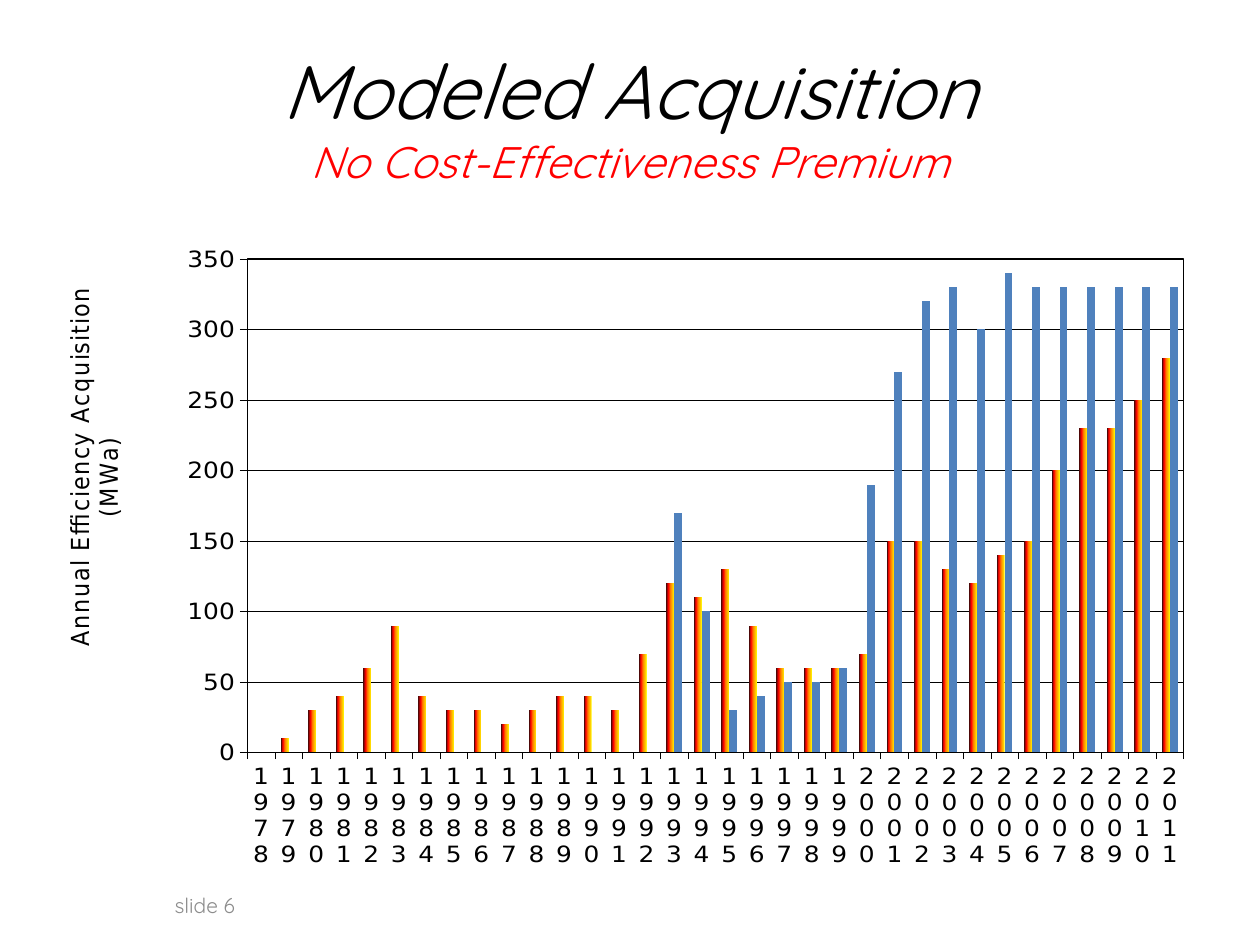
from lxml.etree import SubElement
from pptx import Presentation
from pptx.chart.data import CategoryChartData
from pptx.dml.color import RGBColor
from pptx.enum.chart import XL_CHART_TYPE as ChartType, XL_TICK_MARK as Tick
from pptx.enum.text import MSO_ANCHOR as Anchor, PP_ALIGN as Align
from pptx.oxml import parse_xml
from pptx.oxml.ns import nsdecls, qn
from pptx.util import Inches, Pt

WIDTH, HEIGHT = 10, 7.5
COLORS = {"ink": "000000", "accent": "FF0000", "muted": "8C8C8C", "modeled": "4F81BD"}
FLAME = {0: "FFF200", 45: "FF7A00", 70: "FF0300", 100: "4D0808"}
TEXT_FONT, CHART_FONT = "Quicksand", "DejaVu Sans"
CHART_SIZE = 14.2
FIRST_YEAR = 1978
ACTUAL = [0, 10, 30, 40, 60, 90, 40, 30, 30, 20, 30, 40, 40, 30, 70, 120, 110,
          130, 90, 60, 60, 60, 70, 150, 150, 130, 120, 140, 150, 200, 230, 230, 250, 280]
MODELED = [170, 100, 30, 40, 50, 50, 60, 190, 270, 320, 330, 300, 340, 330, 330,
           330, 330, 330, 330]


def color(name):
    """Return the named color."""
    return RGBColor.from_string(COLORS[name])


def place(left, top, width, height):
    """Turn percentages of the slide into lengths."""
    return (Inches(left * WIDTH / 100), Inches(top * HEIGHT / 100),
            Inches(width * WIDTH / 100), Inches(height * HEIGHT / 100))


def style(font, size, name, ink="ink", italic=False):
    """Set size, face, color and slant of a font."""
    font.size, font.name, font.italic, font.bold = Pt(size), name, italic, False
    font.color.rgb = color(ink)


def write(para, text, **kwargs):
    """Add centered text with the given format to a paragraph."""
    para.alignment = Align.CENTER
    span = para.add_run()
    span.text = text
    style(span.font, **kwargs)


def add_frame(page, box, anchor):
    """Add a wrapping text box and return its text frame."""
    frame = page.shapes.add_textbox(*place(*box)).text_frame
    frame.word_wrap = True
    frame.vertical_anchor = anchor
    return frame


def add_heading(page, box):
    """Place the title and its subtitle."""
    frame = add_frame(page, box, Anchor.MIDDLE)
    write(frame.paragraphs[0], "Modeled Acquisition", size=43.2, name=TEXT_FONT, italic=True)
    write(frame.add_paragraph(), "No Cost-Effectiveness Premium", size=25.2,
          name=TEXT_FONT, ink="accent", italic=True)


def add_footer(page, box):
    """Place the slide number."""
    frame = add_frame(page, box, Anchor.BOTTOM)
    write(frame.paragraphs[0], "slide 6", size=12, name=TEXT_FONT, ink="muted")


def manual_layout(inner=False, **percents):
    """Build a manual chart layout from percentages of the chart."""
    layout = parse_xml(f"<c:layout {nsdecls('c')}/>")
    manual = SubElement(layout, qn("c:manualLayout"))
    settings = {"layoutTarget": "inner"} if inner else {}
    settings.update(xMode="edge", yMode="edge")
    settings.update({tag: percent / 100 for tag, percent in percents.items()})
    for tag, value in settings.items():
        SubElement(manual, qn(f"c:{tag}")).set("val", str(value))
    return layout


def style_line(line):
    """Draw a thin dark line."""
    line.color.rgb = color("ink")
    line.width = Pt(0.25)


def style_axes(chart):
    """Format both axes, the gridlines and the value title."""
    years, values = chart.category_axis, chart.value_axis
    for axis in (years, values):
        axis.major_tick_mark = Tick.OUTSIDE
        style(axis.tick_labels.font, CHART_SIZE, CHART_FONT)
        style_line(axis.format.line)
    body = years._element.find(qn("c:txPr")).find(qn("a:bodyPr"))
    body.set("rot", "0")
    body.set("vert", "wordArtVert")
    values.minimum_scale, values.maximum_scale, values.major_unit = 0, 350, 50
    values.tick_labels.number_format = "#,##0"
    values.tick_labels.number_format_is_linked = False
    values.has_major_gridlines = True
    style_line(values.major_gridlines.format.line)
    frame = values.axis_title.text_frame
    frame._txBody.find(qn("a:bodyPr")).set("rot", "-5400000")
    write(frame.paragraphs[0], "Annual Efficiency Acquisition ", size=CHART_SIZE, name=CHART_FONT)
    write(frame.add_paragraph(), "(MWa)", size=CHART_SIZE, name=CHART_FONT)
    title = values._element.find(qn("c:title"))
    for old in title.findall(qn("c:layout")):
        title.remove(old)
    title.find(qn("c:tx")).addnext(manual_layout(x=1.5, y=13))


def style_plot(chart):
    """Fill the bars and frame the plot area."""
    plot = chart.plots[0]
    plot.gap_width, plot.overlap, plot.vary_by_categories = 150, 0, False
    actual, modeled = plot.series
    modeled.format.fill.solid()
    modeled.format.fill.fore_color.rgb = color("modeled")
    actual.format.fill.gradient()
    actual.format.fill.gradient_angle = 180
    stops = next(actual._element.iter(qn("a:gsLst")))
    for stop in list(stops):
        stops.remove(stop)
    for share, shade in FLAME.items():
        stop = SubElement(stops, qn("a:gs"), pos=str(share * 1000))
        SubElement(stop, qn("a:srgbClr"), val=shade)
    area = chart._chartSpace.chart.plotArea
    for old in area.findall(qn("c:layout")):
        area.remove(old)
    area.insert(0, manual_layout(inner=True, x=17.5, y=3.6, w=79.6, h=87.3))
    area.append(parse_xml(
        f'<c:spPr {nsdecls("c", "a")}><a:noFill/><a:ln w="{Pt(1)}"><a:solidFill>'
        f'<a:srgbClr val="{COLORS["ink"]}"/></a:solidFill></a:ln></c:spPr>'))


def add_acquisition_chart(page, box):
    """Place the yearly acquisition column chart."""
    data = CategoryChartData()
    data.categories = [str(FIRST_YEAR + step) for step in range(len(ACTUAL))]
    data.add_series("Series 1", ACTUAL)
    data.add_series("Series 2", [None] * (len(ACTUAL) - len(MODELED)) + MODELED)
    chart = page.shapes.add_chart(ChartType.COLUMN_CLUSTERED, *place(*box), data).chart
    chart.has_legend = chart.has_title = False
    style(chart.font, CHART_SIZE, CHART_FONT)
    style_axes(chart)
    style_plot(chart)


def main():
    """Build the slide and save the deck."""
    deck = Presentation()
    deck.slide_width, deck.slide_height = Inches(WIDTH), Inches(HEIGHT)
    page = deck.slides.add_slide(deck.slide_layouts[6])
    add_footer(page, (7.5, 90.8, 17.5, 7))
    add_acquisition_chart(page, (3.3, 25.25, 93.35, 66.55))
    add_heading(page, (7.5, 3.3, 85, 17.8))
    deck.save("out.pptx")


if __name__ == "__main__":
    main()
